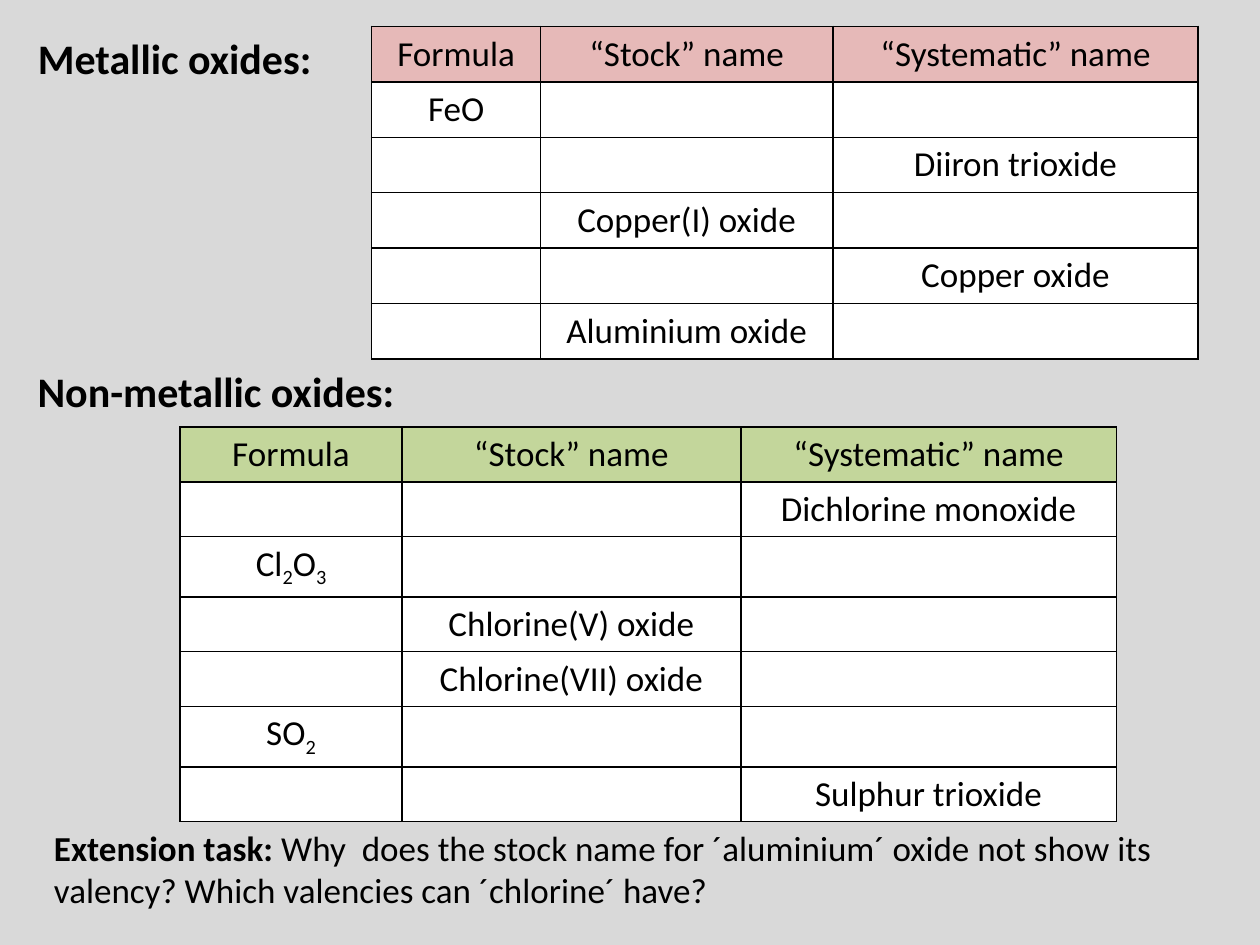
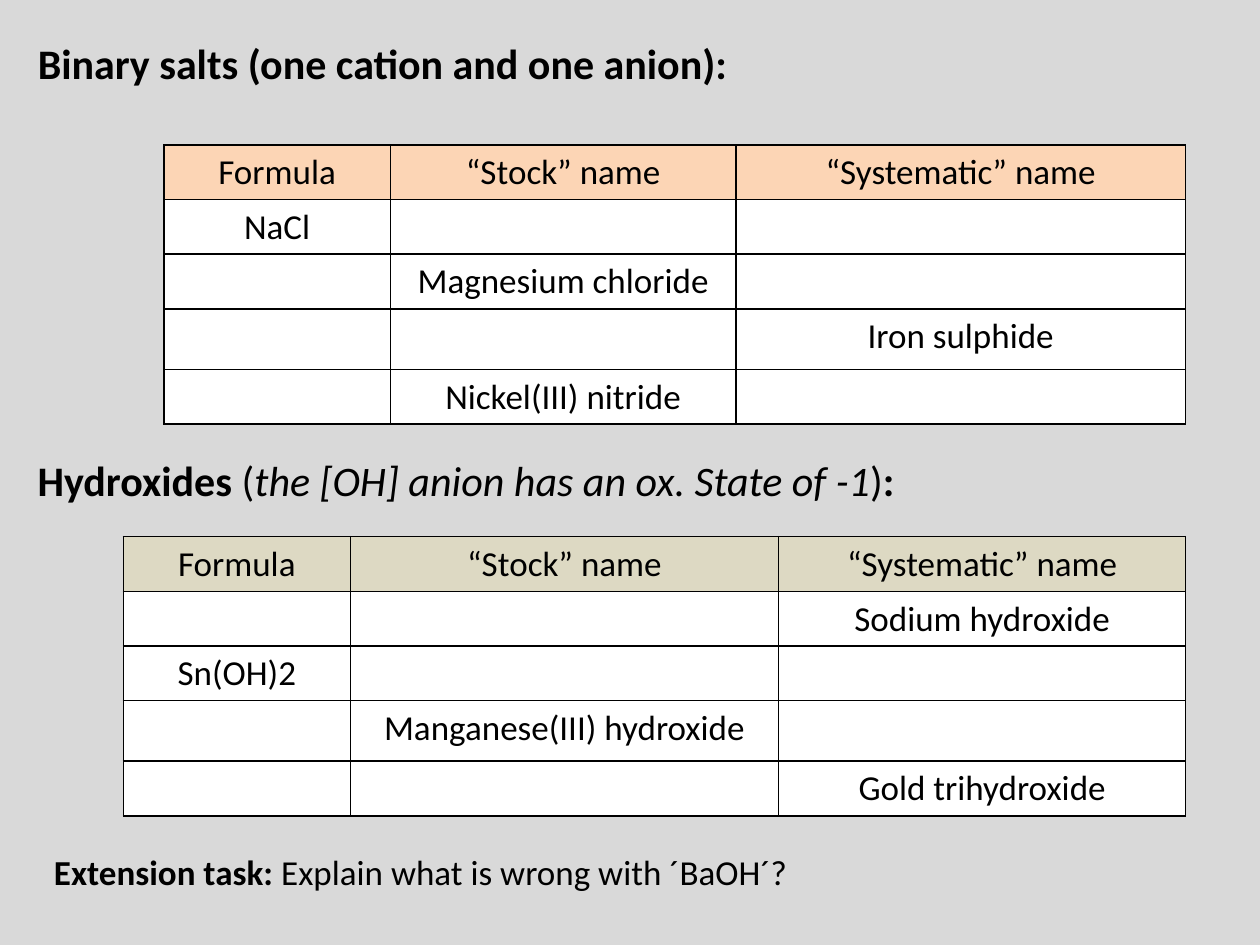
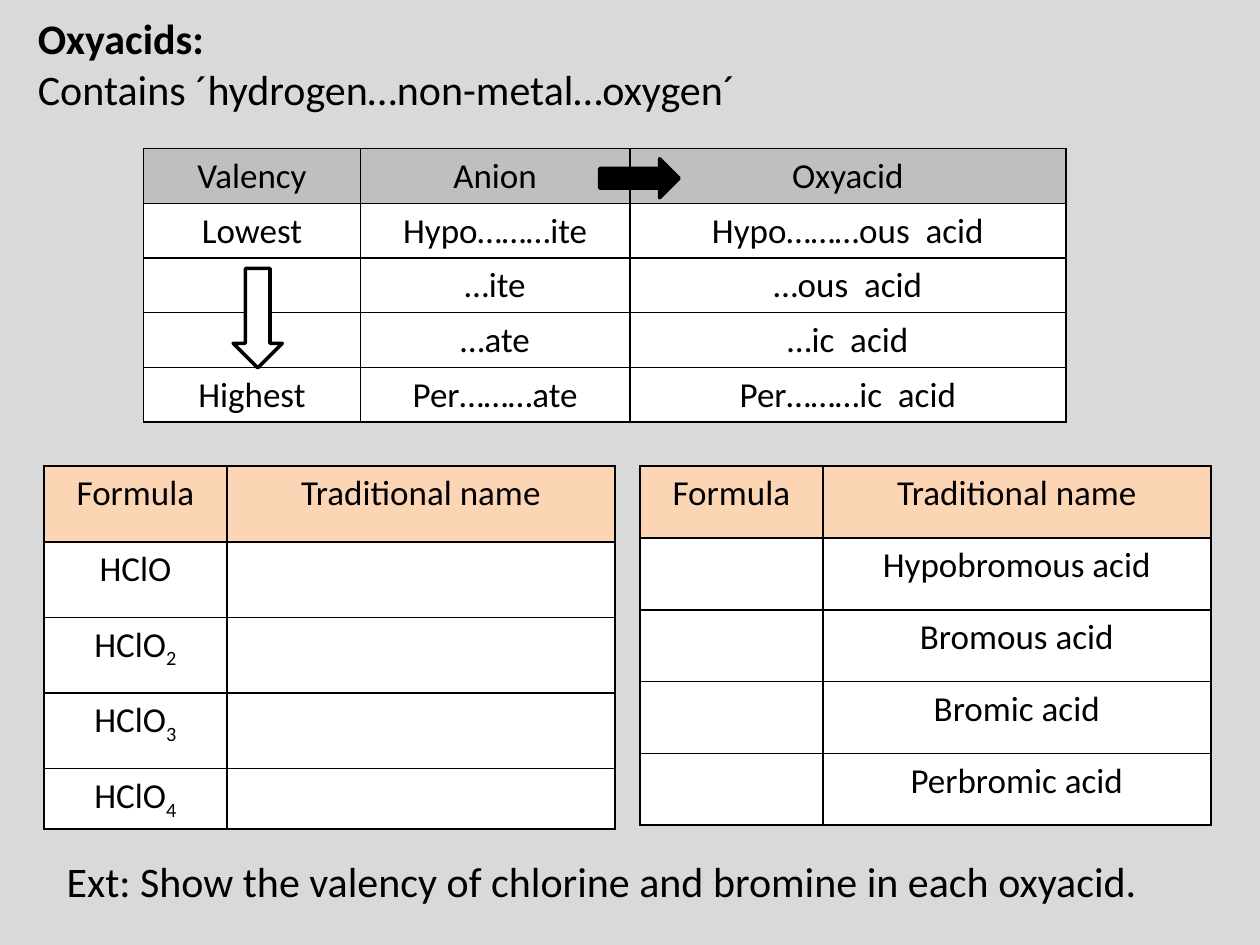
from dataclasses import dataclass
from lxml.etree import SubElement
from pptx import Presentation
from pptx.dml.color import RGBColor
from pptx.enum.shapes import MSO_SHAPE
from pptx.enum.text import MSO_ANCHOR, MSO_AUTO_SIZE, PP_ALIGN
from pptx.oxml.ns import qn
from pptx.util import Inches, Pt


@dataclass(frozen=True)
class Theme:
    font: str = "Calibri"
    head: int = 24
    body: int = 20
    rule: int = 1
    edge: int = 2
    back: str = "D9D9D9"
    ink: str = "000000"
    white: str = "FFFFFF"
    rose: str = "E6B9B8"
    green: str = "C3D69B"
    peach: str = "FCD5B5"
    sand: str = "DDD9C3"
    grey: str = "BFBFBF"


T = Theme()
ROW = 0.43   # row of plain text
DEEP = 0.48  # row with room for a subscript
NAMES = ["Formula", "“Stock” name", "“Systematic” name"]
ACIDS = ["Formula", "Traditional name"]
EXT = ("Extension task: ", "b")


def paint(fill, color):
    fill.solid()
    fill.fore_color.rgb = RGBColor.from_string(color)


# Text: style letters are b (bold), i (italic) and s (subscript)
def add_run(para, text, style, size):
    run = para.add_run()
    run.text = text
    font = run.font
    font.name, font.size = T.font, Pt(size)
    font.bold, font.italic = "b" in style, "i" in style
    font.color.rgb = RGBColor.from_string(T.ink)
    if "s" in style:
        font._element.set("baseline", "-25000")


def write(shape, box, lines, size):
    shape.left, shape.top, shape.width, shape.height = map(Inches, box)
    frame = shape.text_frame
    frame.word_wrap = True
    frame.auto_size = MSO_AUTO_SIZE.SHAPE_TO_FIT_TEXT
    frame.vertical_anchor = MSO_ANCHOR.TOP
    for n, line in enumerate(lines):
        para = frame.add_paragraph() if n else frame.paragraphs[0]
        para.alignment = PP_ALIGN.LEFT
        for text, style in line:
            add_run(para, text, style, size)


def add_title(slide, box, *lines):
    write(slide.shapes.title, box, lines, T.head)


def add_text(slide, box, *lines, size=T.body):
    write(slide.shapes.add_textbox(0, 0, 0, 0), box, lines, size)


# Tables: an underscore lowers the character after it
def fill_cell(cell, text, color):
    paint(cell.fill, color)
    props = cell._tc.get_or_add_tcPr()
    for n, side in enumerate(("lnL", "lnR", "lnT", "lnB")):
        line = SubElement(props, qn(f"a:{side}"), w=str(Pt(T.rule)))
        solid = SubElement(line, qn("a:solidFill"))
        SubElement(solid, qn("a:srgbClr"), val=T.ink)
        props.insert(n, line)
    para = cell.text_frame.paragraphs[0]
    para.alignment = PP_ALIGN.CENTER
    para.font.size = Pt(T.body)
    first, *rest = text.split("_")
    parts = [(first, "")]
    for part in rest:
        parts += [(part[0], "s"), (part[1:], "")]
    for piece, style in parts:
        if piece:
            add_run(para, piece, style, T.body)


def add_grid(slide, left, top, widths, heights, color, rows):
    frame = slide.shapes.add_table(
        len(rows), len(widths), Inches(left), Inches(top),
        Inches(sum(widths)), Inches(sum(heights)))
    table = frame.table
    table.first_row = table.horz_banding = False
    for col, width in zip(table.columns, widths):
        col.width = Inches(width)
    for n, (row, height, texts) in enumerate(zip(table.rows, heights, rows)):
        row.height = Inches(height)
        for cell, text in zip(row.cells, texts):
            fill_cell(cell, text, T.white if n else color)


def add_arrow(slide, box, color, turn=0):
    arrow = slide.shapes.add_shape(MSO_SHAPE.RIGHT_ARROW, *map(Inches, box))
    arrow.shadow.inherit = False
    arrow.rotation = turn
    paint(arrow.fill, color)
    paint(arrow.line.fill, T.ink)
    arrow.line.width = Pt(T.edge)


# Slides
def oxides(slide):
    add_title(slide, (0.2, 0.21, 3.39, 0.5), [("Metallic oxides:", "b")])
    add_grid(slide, 2.95, 0.21, [1.34, 2.32, 2.9], [0.44] * 6, T.rose, [
        NAMES,
        ["FeO", "", ""],
        ["", "", "Diiron trioxide"],
        ["", "Copper(I) oxide", ""],
        ["", "", "Copper oxide"],
        ["", "Aluminium oxide", ""],
    ])
    add_text(slide, (0.2, 2.85, 4.72, 0.5),
             [("Non-metallic oxides:", "b")], size=T.head)
    heights = [ROW, ROW, DEEP, ROW, ROW, DEEP, ROW]
    add_grid(slide, 1.43, 3.39, [1.76, 2.69, 2.98], heights, T.green, [
        NAMES,
        ["", "", "Dichlorine monoxide"],
        ["Cl_2O_3", "", ""],
        ["", "Chlorine(V) oxide", ""],
        ["", "Chlorine(VII) oxide", ""],
        ["SO_2", "", ""],
        ["", "", "Sulphur trioxide"],
    ])
    add_text(slide, (0.33, 6.51, 9.15, 0.77), [
        EXT, ("Why  does the stock name for ´aluminium´ oxide not show its "
              "valency? Which valencies can ´chlorine´ have?", "")])


def salts(slide):
    heights = [ROW, ROW, ROW, DEEP, ROW]
    add_title(slide, (0.2, 0.25, 9.37, 0.5),
              [("Binary salts (one cation and one anion):", "b")])
    add_grid(slide, 1.3, 1.15, [1.8, 2.74, 3.57], heights, T.peach, [
        NAMES,
        ["NaCl", "", ""],
        ["", "Magnesium chloride", ""],
        ["", "", "Iron sulphide"],
        ["", "Nickel(III) nitride", ""],
    ])
    add_text(slide, (0.2, 3.56, 9.37, 0.5), [
        ("Hydroxides ", "b"), ("(", ""),
        ("the [OH] anion has an ox. State of -1", "i"),
        (")", ""), (":", "b")], size=T.head)
    add_grid(slide, 0.98, 4.26, [1.8, 3.4, 3.23], heights, T.sand, [
        NAMES,
        ["", "", "Sodium hydroxide"],
        ["Sn(OH)2", "", ""],
        ["", "Manganese(III) hydroxide", ""],
        ["", "", "Gold trihydroxide"],
    ])
    add_text(slide, (0.33, 6.7, 9.15, 0.44),
             [EXT, ("Explain what is wrong with ´BaOH´?", "")])


def acids(slide):
    add_title(slide, (0.2, 0.05, 9.37, 0.91), [("Oxyacids:", "b")],
              [("Contains ´hydrogen…non-metal…oxygen´", "")])
    add_grid(slide, 1.14, 1.18, [1.72, 2.14, 3.46], [ROW] * 5, T.grey, [
        ["Valency", "Anion", "Oxyacid"],
        ["Lowest", "Hypo………ite", "Hypo………ous  acid"],
        ["", "…ite", "…ous  acid"],
        ["", "…ate", "…ic  acid"],
        ["Highest", "Per………ate", "Per………ic  acid"],
    ])
    add_arrow(slide, (4.76, 1.26, 0.63, 0.31), T.ink)
    add_arrow(slide, (1.65, 2.33, 0.79, 0.39), T.white, turn=90)
    widths = [1.45, 3.08]
    add_grid(slide, 0.35, 3.7, widths, [0.6] * 4 + [DEEP], T.peach, [
        ACIDS,
        ["HClO", ""],
        *([f"HClO_{n}", ""] for n in (2, 3, 4)),
    ])
    add_grid(slide, 5.08, 3.7, widths, [0.57] * 5, T.peach, [
        ACIDS,
        *(["", f"{name} acid"]
          for name in ("Hypobromous", "Bromous", "Bromic", "Perbromic")),
    ])
    add_text(slide, (0.43, 6.74, 9.21, 0.5), [
        ("Ext: Show the valency of chlorine and bromine in each oxyacid.",
         "")], size=T.head)


def main():
    deck = Presentation()
    deck.slide_width, deck.slide_height = Inches(10), Inches(7.5)
    paint(deck.slide_master.background.fill, T.back)
    layout = deck.slide_layouts.get_by_name("Title Only")
    for build in (oxides, salts, acids):
        build(deck.slides.add_slide(layout))
    deck.save("out.pptx")


if __name__ == "__main__":
    main()
